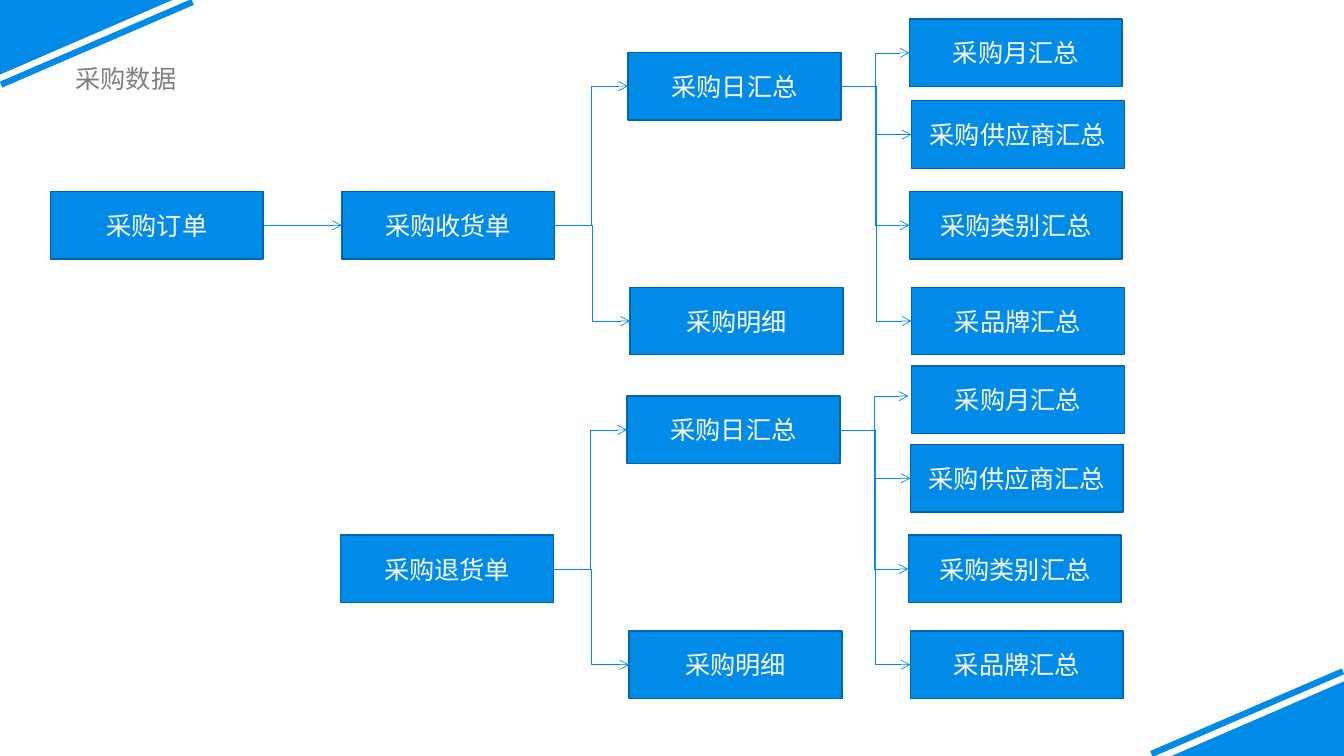
from dataclasses import dataclass

from lxml import etree
from pptx import Presentation
from pptx.dml.color import RGBColor
from pptx.enum.shapes import MSO_CONNECTOR, MSO_SHAPE
from pptx.enum.text import MSO_ANCHOR, MSO_AUTO_SIZE, PP_ALIGN
from pptx.oxml.ns import qn
from pptx.util import Pt

PX = 9144  # EMU per px, 100 px to the inch
SLIDE_W, SLIDE_H = 1333, 750
BOX_W, BOX_H = 211, 67


@dataclass(frozen=True)
class Theme:
    blue: RGBColor = RGBColor(0x01, 0x8B, 0xE9)
    border: RGBColor = RGBColor(0x01, 0x67, 0xAC)
    white: RGBColor = RGBColor(0xFF, 0xFF, 0xFF)
    grey: RGBColor = RGBColor(0x7F, 0x7F, 0x7F)
    font: str = "Arial"
    size: Pt = Pt(18)
    border_width: Pt = Pt(1)
    arrow_width: Pt = Pt(0.5)
    stripe_width: Pt = Pt(4.5)


THEME = Theme()


def px(*values):
    return [v * PX for v in values]


def set_text(tf, text, color, align):
    p = tf.paragraphs[0]
    p.text = text
    p.alignment = align
    p.font.name = THEME.font
    p.font.size = THEME.size
    p.font.color.rgb = color


def add_line(slide, kind, start, end, width):
    line = slide.shapes.add_connector(kind, *px(*start, *end))
    line.line.color.rgb = THEME.blue
    line.line.width = width
    etree.SubElement(line._element.spPr, qn("a:effectLst"))
    return line


def add_box(slide, left, top, text):
    sp = slide.shapes.add_shape(MSO_SHAPE.FLOWCHART_PROCESS,
                                *px(left, top, BOX_W, BOX_H))
    sp.shadow.inherit = False
    sp.fill.solid()
    sp.fill.fore_color.rgb = THEME.blue
    sp.line.color.rgb = THEME.border
    sp.line.width = THEME.border_width
    sp.text_frame.vertical_anchor = MSO_ANCHOR.MIDDLE
    set_text(sp.text_frame, text, THEME.white, PP_ALIGN.CENTER)
    return sp


def add_arrow(slide, source, target=None, end=(0, 0), kind=MSO_CONNECTOR.ELBOW):
    """Arrow from a box's right side to a box's left side, or to a free end."""
    arrow = add_line(slide, kind, (0, 0), end, THEME.arrow_width)
    arrow.begin_connect(source, 3)
    if target is not None:
        arrow.end_connect(target, 1)
    etree.SubElement(arrow.line._get_or_add_ln(), qn("a:tailEnd"), type="arrow")


def add_corner(slide, place):
    """Triangle and stripe; place maps top-left points to the chosen corner."""
    start, *rest = [place(*pt) for pt in [(0, 0), (171, 0), (0, 74)]]
    builder = slide.shapes.build_freeform(*start, scale=PX)
    builder.add_line_segments(rest)
    sp = builder.convert_to_shape()
    sp.shadow.inherit = False
    sp.fill.solid()
    sp.fill.fore_color.rgb = THEME.blue
    sp.line.fill.background()
    add_line(slide, MSO_CONNECTOR.STRAIGHT, place(1, 84), place(191, 2),
             THEME.stripe_width)


def add_title(slide, left, top, width, height, text):
    tf = slide.shapes.add_textbox(*px(left, top, width, height)).text_frame
    tf.word_wrap = False
    tf.auto_size = MSO_AUTO_SIZE.SHAPE_TO_FIT_TEXT
    set_text(tf, text, THEME.grey, PP_ALIGN.LEFT)


def add_tree(slide, left, top, receipt_text):
    """Receipt, its daily summary and details, and three further summaries."""
    receipt = add_box(slide, left, top + 171, receipt_text)
    daily = add_box(slide, left + 284, top + 33, "采购日汇总")
    details = add_box(slide, left + 286, top + 266, "采购明细")
    for target in (daily, details):
        add_arrow(slide, receipt, target)

    for dx, dy, text in [(565, 81, "采购供应商汇总"),
                         (563, 171, "采购类别汇总"),
                         (565, 266, "采品牌汇总")]:
        add_arrow(slide, daily, add_box(slide, left + dx, top + dy, text))
    return receipt, daily


def build_slide(prs):
    slide = prs.slides.add_slide(prs.slide_layouts[6])

    # Corner decorations
    add_corner(slide, lambda x, y: (x, y))
    add_corner(slide, lambda x, y: (SLIDE_W - x, SLIDE_H - y))

    add_title(slide, 65, 58, 120, 40, "采购数据")

    # Purchase order and goods received
    receipt, daily = add_tree(slide, 339, 19, "采购收货单")
    order = add_box(slide, 50, 190, "采购订单")
    add_arrow(slide, order, receipt, kind=MSO_CONNECTOR.STRAIGHT)
    add_arrow(slide, daily, add_box(slide, 902, 19, "采购月汇总"))

    # Goods returned; the monthly arrow stops just short of its box
    _, daily = add_tree(slide, 338, 360, "采购退货单")
    add_arrow(slide, daily, end=(901, 393))
    add_box(slide, 904, 363, "采购月汇总")


def main():
    prs = Presentation()
    prs.slide_width, prs.slide_height = px(SLIDE_W, SLIDE_H)
    build_slide(prs)
    prs.save("out.pptx")


if __name__ == "__main__":
    main()
